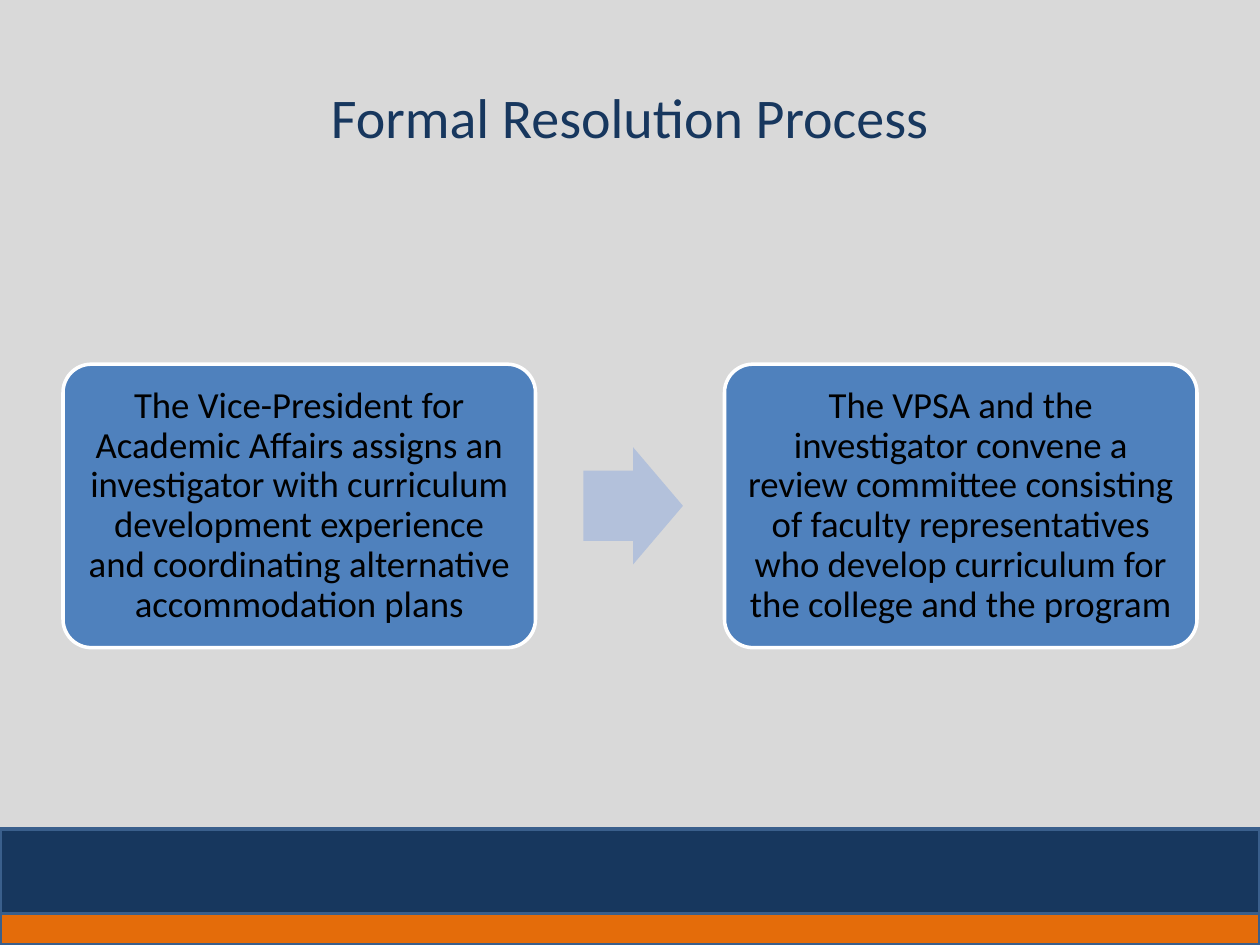
from pptx import Presentation
from pptx.dml.color import RGBColor
from pptx.enum.shapes import MSO_SHAPE
from pptx.enum.text import MSO_ANCHOR, PP_ALIGN
from pptx.util import Inches, Pt

COLORS = {
    "background": "D9D9D9",
    "navy": "17375E",
    "orange": "E46C0A",
    "band_line": "3A5F8C",
    "step": "4F81BD",
    "step_line": "FFFFFF",
    "arrow": "B3C1DB",
    "step_text": "000000",
}
STEPS = [
    "The Vice-President for Academic Affairs assigns an investigator with curriculum "
    "development experience and coordinating alternative accommodation plans",
    "The VPSA and the investigator convene a review committee consisting of faculty "
    "representatives who develop curriculum for the college and the program",
]
SLIDE_WIDTH, SLIDE_HEIGHT = 10, 7.5
MARGIN = 0.5
STEP_WIDTH, STEP_HEIGHT, STEP_TOP = 3.75, 2.25, 2.89
STEP_PITCH = 5.25
ARROW_WIDTH, ARROW_HEIGHT = 0.79, 0.93
ARROW_OFFSET = 4.13
BAND_TOP = 6.58


def color(name):
    return RGBColor.from_string(COLORS[name])


def add_block(slide, preset, box, fill, line=None, adjustments=()):
    block = slide.shapes.add_shape(preset, *map(Inches, box))
    block.shadow.inherit = False
    block.fill.solid()
    block.fill.fore_color.rgb = color(fill)
    if line:
        block.line.color.rgb = color(line)
        block.line.width = Pt(2)
    else:
        block.line.fill.background()
    for index, value in enumerate(adjustments):
        block.adjustments[index] = value
    return block


def write(frame, text, size, text_color):
    frame.word_wrap = True
    frame.vertical_anchor = MSO_ANCHOR.MIDDLE
    frame.text = text
    paragraph = frame.paragraphs[0]
    paragraph.alignment = PP_ALIGN.CENTER
    font = paragraph.runs[0].font
    font.name = "Calibri"
    font.size = Pt(size)
    font.color.rgb = color(text_color)
    return paragraph


def add_title(slide, text):
    title = slide.shapes.add_textbox(
        Inches(MARGIN), Inches(0.3), Inches(SLIDE_WIDTH - 2 * MARGIN), Inches(1.25)
    )
    write(title.text_frame, text, 32, "navy")


def add_step(slide, left, text):
    step = add_block(slide, MSO_SHAPE.ROUNDED_RECTANGLE,
                     (left, STEP_TOP, STEP_WIDTH, STEP_HEIGHT),
                     "step", "step_line", [0.1])
    frame = step.text_frame
    frame.margin_left = frame.margin_right = Inches(0.09)
    frame.margin_top = frame.margin_bottom = Inches(0.09)
    write(frame, text, 21, "step_text").line_spacing = 0.9


def add_arrow(slide, left):
    top = STEP_TOP + (STEP_HEIGHT - ARROW_HEIGHT) / 2
    add_block(slide, MSO_SHAPE.RIGHT_ARROW, (left, top, ARROW_WIDTH, ARROW_HEIGHT),
              "arrow", adjustments=[0.6, 0.5])


def add_band(slide, height, fill):
    add_block(slide, MSO_SHAPE.RECTANGLE, (0, BAND_TOP, SLIDE_WIDTH, height),
              fill, "band_line")


def main():
    deck = Presentation()
    deck.slide_width, deck.slide_height = Inches(SLIDE_WIDTH), Inches(SLIDE_HEIGHT)
    slide = deck.slides.add_slide(deck.slide_layouts[6])
    slide.background.fill.solid()
    slide.background.fill.fore_color.rgb = color("background")

    add_band(slide, SLIDE_HEIGHT - BAND_TOP, "orange")
    add_band(slide, 0.67, "navy")
    add_title(slide, "Formal Resolution Process")
    for index, text in enumerate(STEPS):
        left = MARGIN + index * STEP_PITCH
        add_step(slide, left, text)
        if index < len(STEPS) - 1:
            add_arrow(slide, left + ARROW_OFFSET)

    deck.save("out.pptx")


if __name__ == "__main__":
    main()
